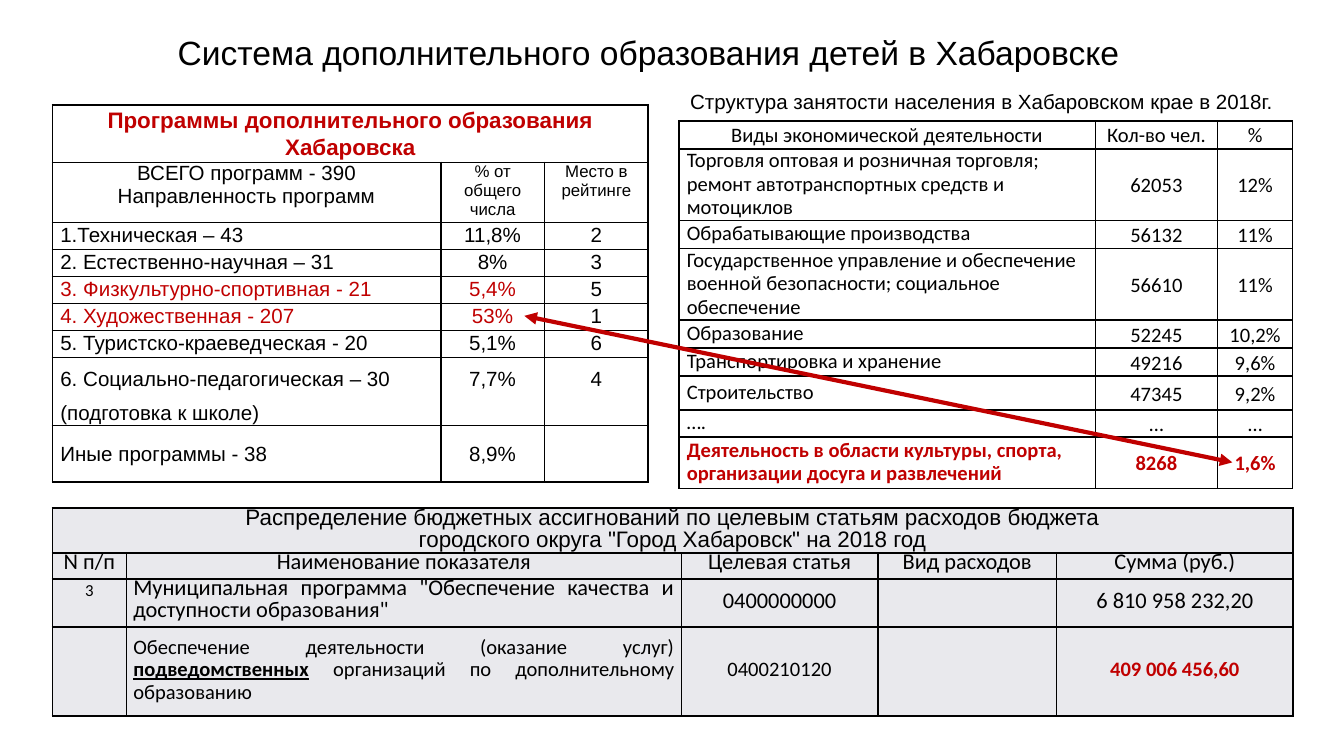
from lxml import etree
from pptx import Presentation
from pptx import util as u
from pptx.dml.color import RGBColor
from pptx.enum import shapes, text
from pptx.oxml.ns import qn

COLORS = {"black": "000000", "red": "C00000", "gray": "E9E9ED"}
TITLE = "Система дополнительного образования детей в Хабаровске"
EMPLOYMENT_CAPTION = "Структура занятости населения в Хабаровском крае в 2018г."

LEFT, CENTER, JUSTIFY = (text.PP_ALIGN.LEFT, text.PP_ALIGN.CENTER,
                         text.PP_ALIGN.JUSTIFY)
TOP, MIDDLE = text.MSO_ANCHOR.TOP, text.MSO_ANCHOR.MIDDLE
BUDGET_LINE = u.Pt(12)

# Sizes are in centimetres. Styles go from general to specific: the base of the
# table, then its columns, then its rows, then single cells.
PROGRAMS = {
    "at": (0.99, 1.98),
    "columns": [7.34, 1.96, 1.96],
    "heights": [1.09, 1.14] + [0.51] * 5 + [1.28, 1.07],
    "rows": [
        ["Программы дополнительного образования Хабаровска"],
        ["ВСЕГО программ - 390\nНаправленность программ", "% от общего числа",
         "Место в рейтинге"],
        ["1.Техническая – 43", "11,8%", "2"],
        ["2. Естественно-научная – 31", "8%", "3"],
        ["3. Физкультурно-спортивная - 21", "5,4%", "5"],
        ["4. Художественная - 207", "53%", "1"],
        ["5. Туристско-краеведческая - 20", "5,1%", "6"],
        ["6. Социально-педагогическая – 30 (подготовка к школе)", "7,7%", "4"],
        ["Иные программы - 38", "8,9%", ""],
    ],
    "base": {"font": "Arial", "spacing": 1.07, "inset": 0.15},
    "by_column": {0: {"align": LEFT}},
    "by_row": {
        0: {"size": 12, "bold": True, "color": "red", "align": CENTER, "anchor": MIDDLE},
        1: {"size": 9, "align": CENTER, "spacing": 1.0},
        7: {"spacing": u.Pt(18)},
        8: {"anchor": MIDDLE},
    },
    "by_cell": {(1, 0): {"size": 11},
                **{(row, col): {"color": "red"} for row in (4, 5) for col in (0, 1)}},
}

EMPLOYMENT = {
    "at": (12.83, 2.29),
    "columns": [7.87, 2.31, 1.42],
    "heights": [0.53, 1.35, 0.53, 1.35, 0.53, 0.53, 0.64, 0.48, 0.97],
    "rows": [
        ["Виды экономической деятельности", "Кол-во чел.", "%"],
        ["Торговля оптовая и розничная торговля; ремонт автотранспортных средств "
         "и мотоциклов", "62053", "12%"],
        ["Обрабатывающие производства", "56132", "11%"],
        ["Государственное управление и обеспечение военной безопасности; "
         "социальное обеспечение", "56610", "11%"],
        ["Образование", "52245", "10,2%"],
        ["Транспортировка и хранение", "49216", "9,6%"],
        ["Строительство", "47345", "9,2%"],
        ["….", "…", "…"],
        ["Деятельность в области культуры, спорта, организации досуга и развлечений",
         "8268", "1,6%"],
    ],
    "base": {"spacing": 1.07, "inset": 0.15, "anchor": MIDDLE},
    "by_column": {0: {"align": LEFT, "spacing": u.Pt(12.6)}, 2: {"inset": 0}},
    "by_row": {0: {"align": CENTER, "spacing": 1.07, "anchor": TOP},
               8: {"color": "red", "bold": True}},
    "by_cell": {},
}

BUDGET = {
    "at": (0.99, 9.6),
    "columns": [1.4, 10.49, 3.71, 3.38, 4.47],
    "heights": [0.85, 0.49, 0.91, 1.68],
    "rows": [
        ["Распределение бюджетных ассигнований по целевым статьям расходов бюджета\n"
         "городского округа \"Город Хабаровск\" на 2018 год"],
        ["N п/п", "Наименование показателя", "Целевая статья", "Вид расходов",
         "Сумма (руб.)"],
        ["3", "Муниципальная программа \"Обеспечение качества и доступности образования\"",
         "0400000000", "", "6 810 958 232,20"],
        ["", "Обеспечение деятельности (оказание услуг) *подведомственных* организаций "
         "по дополнительному образованию", "0400210120", "", "409 006 456,60"],
    ],
    "base": {"size": 12, "spacing": BUDGET_LINE, "inset": 0.13, "fill": "gray"},
    "by_column": {},
    "by_row": {0: {"font": "Arial"}, 2: {"anchor": MIDDLE},
               3: {"size": 11, "anchor": MIDDLE}},
    "by_cell": {(2, 0): {"size": 9, "anchor": TOP},
                (2, 1): {"align": JUSTIFY, "anchor": TOP},
                (3, 1): {"align": JUSTIFY},
                (3, 4): {"color": "red", "bold": True}},
}

DEFAULT = {"font": "Calibri", "size": 11, "color": "black", "bold": False,
           "align": CENTER, "anchor": TOP, "spacing": 1.0, "inset": 0, "fill": None}


def rgb(name):
    return RGBColor.from_string(COLORS[name])


def write(frame, content, style):
    """Fill a text frame; words between asterisks become bold and underlined."""
    frame.word_wrap = True
    for index, line in enumerate(content.split("\n")):
        para = frame.paragraphs[0] if index == 0 else frame.add_paragraph()
        para.alignment = style["align"]
        para.line_spacing = style["spacing"]
        for part, words in enumerate(line.split("*")):
            if not words:
                continue
            marked = part % 2 == 1
            span = para.add_run()
            span.text = words
            span.font.name = style["font"]
            span.font.size = u.Pt(style["size"])
            span.font.bold = style["bold"] or marked
            span.font.underline = marked
            span.font.color.rgb = rgb(style["color"])


def add_borders(cell):
    properties = cell._tc.get_or_add_tcPr()
    for side in ("lnL", "lnR", "lnT", "lnB"):
        border = etree.SubElement(properties, qn(f"a:{side}"), w=str(u.Pt(1)))
        fill = etree.SubElement(border, qn("a:solidFill"))
        etree.SubElement(fill, qn("a:srgbClr"), val=COLORS["black"])


def add_grid(page, data):
    """Add a bordered table; a row with a single entry spans all columns."""
    columns, heights = data["columns"], data["heights"]
    left, top = data["at"]
    table = page.shapes.add_table(
        len(heights), len(columns), u.Cm(left), u.Cm(top),
        u.Cm(sum(columns)), u.Cm(sum(heights))).table
    table.first_row = table.horz_banding = False
    for column, width in zip(table.columns, columns):
        column.width = u.Cm(width)
    for row, height in zip(table.rows, heights):
        row.height = u.Cm(height)
    for r, entries in enumerate(data["rows"]):
        if len(entries) == 1:
            table.cell(r, 0).merge(table.cell(r, len(columns) - 1))
        for c in range(len(columns)):
            style = {**DEFAULT, **data["base"], **data["by_column"].get(c, {}),
                     **data["by_row"].get(r, {}), **data["by_cell"].get((r, c), {})}
            cell = table.cell(r, c)
            cell.margin_left = cell.margin_right = u.Cm(style["inset"])
            cell.margin_top = cell.margin_bottom = 0
            cell.vertical_anchor = style["anchor"]
            add_borders(cell)
            if style["fill"]:
                cell.fill.solid()
                cell.fill.fore_color.rgb = rgb(style["fill"])
            else:
                cell.fill.background()
            if c < len(entries):
                write(cell.text_frame, entries[c], style)


def place_text(box, left, top, width, height, content, size, anchor):
    box.left, box.top, box.width, box.height = map(u.Cm, (left, top, width, height))
    frame = box.text_frame
    frame.auto_size = text.MSO_AUTO_SIZE.NONE
    frame.vertical_anchor = anchor
    frame.margin_left = frame.margin_right = u.Cm(0.18)
    frame.margin_top = frame.margin_bottom = u.Cm(0.1)
    write(frame, content, {**DEFAULT, "font": "Arial", "size": size})


def add_double_arrow(page, start, end):
    arrow = page.shapes.add_connector(
        shapes.MSO_CONNECTOR.STRAIGHT, *map(u.Cm, start + end))
    arrow.line.color.rgb = rgb("red")
    arrow.line.width = u.Pt(2.25)
    line = arrow.line._get_or_add_ln()
    for tip in ("headEnd", "tailEnd"):
        etree.SubElement(line, qn(f"a:{tip}"), type="triangle")
    etree.SubElement(arrow._element.spPr, qn("a:effectLst"))


def main():
    deck = Presentation()
    deck.slide_width, deck.slide_height = u.Cm(25.4), u.Cm(14.29)
    page = deck.slides.add_slide(deck.slide_layouts[5])
    place_text(page.shapes.title, 0.56, 0.51, 23.4, 0.97, TITLE, 18, TOP)
    add_grid(page, PROGRAMS)
    caption = page.shapes.add_textbox(0, 0, 0, 0)
    place_text(caption, 12.7, 1.58, 11.71, 0.66, EMPLOYMENT_CAPTION, 11, MIDDLE)
    add_grid(page, EMPLOYMENT)
    add_grid(page, BUDGET)
    add_double_arrow(page, (9.91, 5.97), (23.29, 8.74))
    deck.save("out.pptx")


if __name__ == "__main__":
    main()
